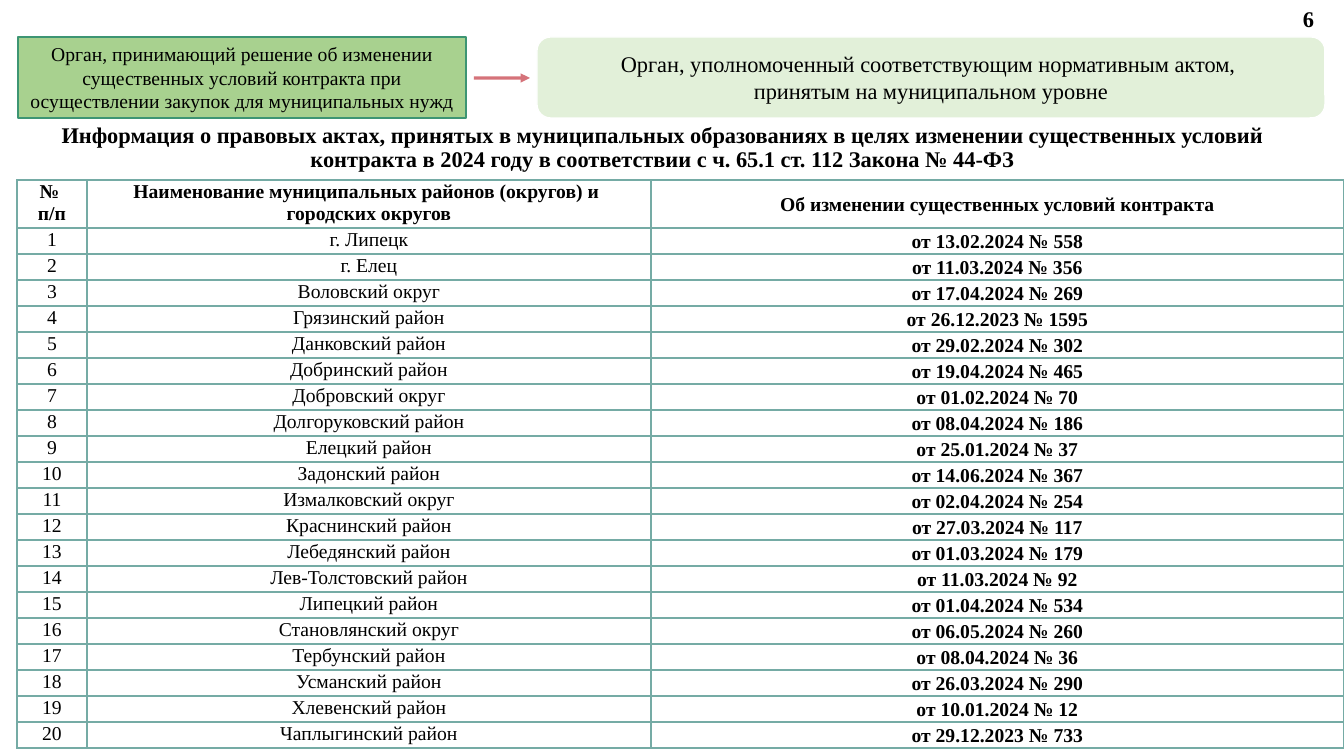
import pptx
import pptx.util
import pptx.dml.color
import pptx.enum.shapes
import pptx.enum.text
import pptx.oxml
import pptx.oxml.ns

SHAPES = pptx.enum.shapes.MSO_SHAPE
ALIGN = pptx.enum.text.PP_ALIGN
ANCHOR = pptx.enum.text.MSO_ANCHOR

HEADERS = [
    "№ \nп/п",
    "Наименование муниципальных районов (округов) и \nгородских округов",
    "Об изменении существенных условий контракта",
]
ACTS = [
    ("г. Липецк", "13.02.2024 № 558"),
    ("г. Елец", "11.03.2024 № 356"),
    ("Воловский округ", "17.04.2024 № 269"),
    ("Грязинский район", "26.12.2023 № 1595"),
    ("Данковский район", "29.02.2024 № 302"),
    ("Добринский район", "19.04.2024 № 465"),
    ("Добровский округ", "01.02.2024 № 70"),
    ("Долгоруковский район", "08.04.2024 № 186"),
    ("Елецкий район", "25.01.2024 № 37"),
    ("Задонский район", "14.06.2024 № 367"),
    ("Измалковский округ", "02.04.2024 № 254"),
    ("Краснинский район", "27.03.2024 № 117"),
    ("Лебедянский район", "01.03.2024 № 179"),
    ("Лев-Толстовский район", "11.03.2024 № 92"),
    ("Липецкий район", "01.04.2024 № 534"),
    ("Становлянский округ", "06.05.2024 № 260"),
    ("Тербунский район", "08.04.2024 № 36"),
    ("Усманский район", "26.03.2024 № 290"),
    ("Хлевенский район", "10.01.2024 № 12"),
    ("Чаплыгинский район", "29.12.2023 № 733"),
]


def px(length):
    return pptx.util.Emu(round(length * 914400 / 100.8))


def color(value):
    return pptx.dml.color.RGBColor.from_string(value)


def element(xml):
    space = pptx.oxml.ns.nsdecls("a")
    return pptx.oxml.parse_xml(xml.replace(" ", f" {space} ", 1))


def write(frame, text, size=14, bold=False, align=ALIGN.CENTER, spacing=None, font="Times New Roman"):
    frame.word_wrap = True
    for index, line in enumerate(text.split("\n")):
        para = frame.add_paragraph() if index else frame.paragraphs[0]
        para.alignment = align
        para.line_spacing = spacing
        span = para.add_run()
        span.text = line
        span.font.name = font
        span.font.size = pptx.util.Pt(size)
        span.font.bold = bold
        span.font.color.rgb = color("000000")


class Page:
    border = "75ABA5"
    arrow_color = "C53B45"

    def __init__(self, deck):
        self.shapes = deck.slides.add_slide(deck.slide_layouts[6]).shapes

    def text(self, area, text, anchor=ANCHOR.TOP, **style):
        box = self.shapes.add_textbox(*map(px, area))
        box.text_frame.vertical_anchor = anchor
        write(box.text_frame, text, **style)

    def block(self, kind, area, text, fill, line, **style):
        box = self.shapes.add_shape(kind, *map(px, area))
        box.shadow.inherit = False
        box.fill.solid()
        box.fill.fore_color.rgb = color(fill)
        box.line.color.rgb = color(line)
        box.line.width = pptx.util.Pt(1)
        box.text_frame.vertical_anchor = ANCHOR.MIDDLE
        write(box.text_frame, text, **style)

    def arrow(self, left, right, y):
        arrow = self.shapes.add_connector(
            pptx.enum.shapes.MSO_CONNECTOR.STRAIGHT, px(left), px(y), px(right), px(y))
        arrow.line.color.rgb = color(self.arrow_color)
        arrow.line.width = pptx.util.Pt(2.25)
        line = arrow.line._get_or_add_ln()
        line.find(".//" + pptx.oxml.ns.qn("a:srgbClr")).append(element('<a:alpha val="71000"/>'))
        line.append(element('<a:tailEnd type="triangle"/>'))
        arrow._element.spPr.append(element("<a:effectLst />"))

    def cell(self, cell, text, bold, anchor):
        cell.margin_left = cell.margin_right = cell.margin_top = px(1)
        cell.margin_bottom = 0
        cell.vertical_anchor = anchor
        cell.fill.background()
        properties = cell._tc.get_or_add_tcPr()
        for index, side in enumerate("LRTB"):
            properties.insert(index, element(
                f'<a:ln{side} w="19050"><a:solidFill><a:srgbClr val="{self.border}"/>'
                f'</a:solidFill></a:ln{side}>'))
        write(cell.text_frame, text, bold=bold)

    def table(self, left, top, widths, header_height, row_height, rows):
        heights = [header_height] + [row_height] * (len(rows) - 1)
        table = self.shapes.add_table(
            len(rows), len(widths), px(left), px(top), px(sum(widths)), px(sum(heights))).table
        table.first_row = table.horz_banding = False
        for column, width in zip(table.columns, widths):
            column.width = px(width)
        for row, height in zip(table.rows, heights):
            row.height = px(height)
        last = len(widths) - 1
        for y, row in enumerate(rows):
            for x, text in enumerate(row):
                anchor = ANCHOR.MIDDLE if x == last else ANCHOR.TOP
                self.cell(table.cell(y, x), text, y == 0 or x == last, anchor)


def main():
    deck = pptx.Presentation()
    deck.slide_width, deck.slide_height = px(1344), px(756)
    page = Page(deck)
    page.text(
        (19, 120, 1287, 57),
        "Информация о правовых актах, принятых в муниципальных образованиях в целях изменении "
        "существенных условий контракта в 2024 году в соответствии с ч. 65.1 ст. 112 Закона № 44-ФЗ",
        anchor=ANCHOR.MIDDLE, size=16, bold=True, spacing=0.9)
    rows = [HEADERS] + [
        (str(number), place, "от " + act) for number, (place, act) in enumerate(ACTS, 1)]
    page.table(17, 180, [70, 564, 693], 48, 26, rows)
    page.block(
        SHAPES.ROUNDED_RECTANGLE, (537, 37, 788, 81),
        "Орган, уполномоченный соответствующим нормативным актом, \nпринятым на муниципальном уровне",
        "E2F0D9", "FFFFFF", size=16)
    page.block(
        SHAPES.RECTANGLE, (18, 37, 448, 81),
        "Орган, принимающий решение об изменении существенных условий контракта "
        "при осуществлении закупок для муниципальных нужд",
        "A8D18F", "3D9573")
    page.arrow(474, 530, 78)
    page.text((1293, 0, 41, 37), "6", size=16, bold=True, align=ALIGN.LEFT)
    deck.save("out.pptx")


if __name__ == "__main__":
    main()
